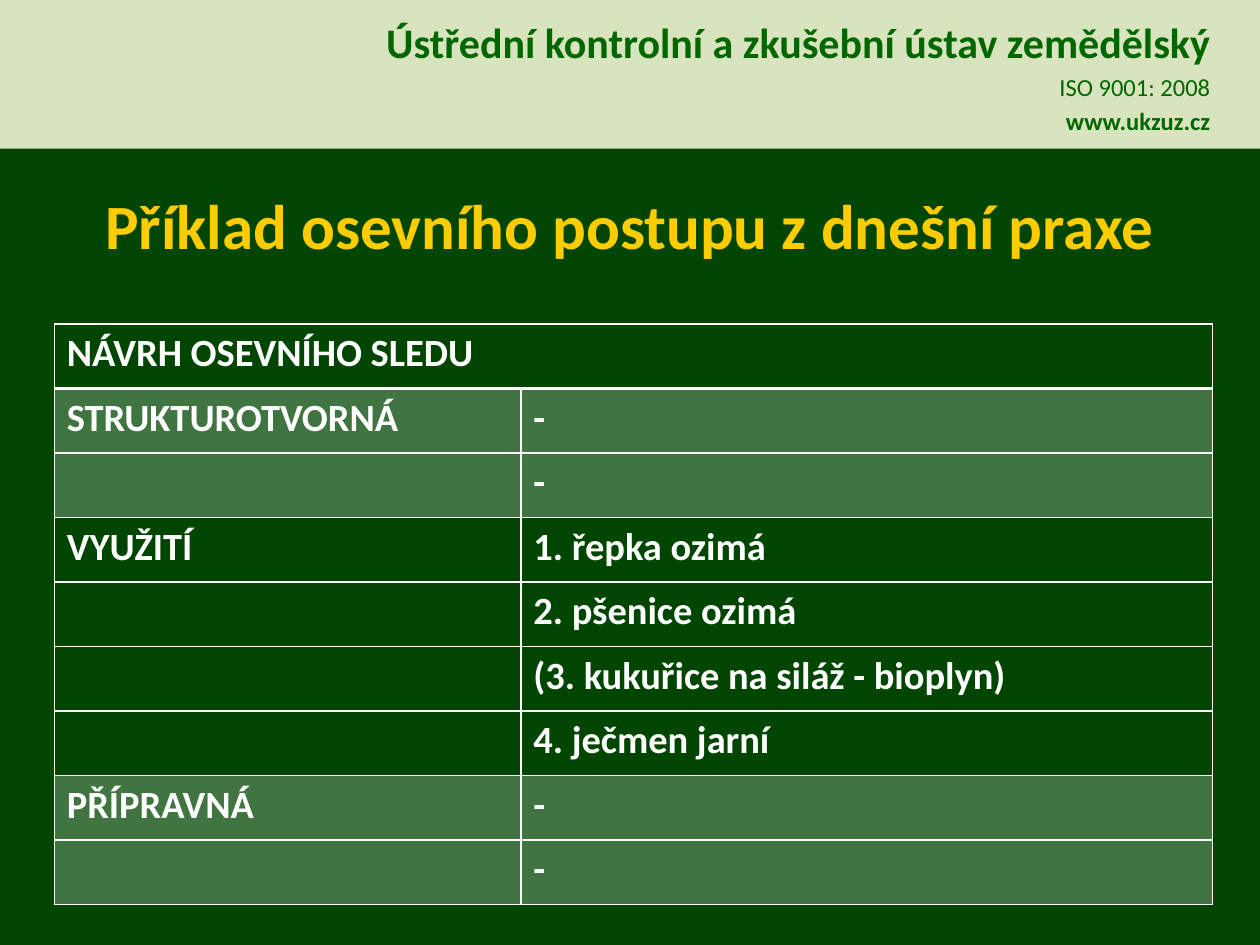
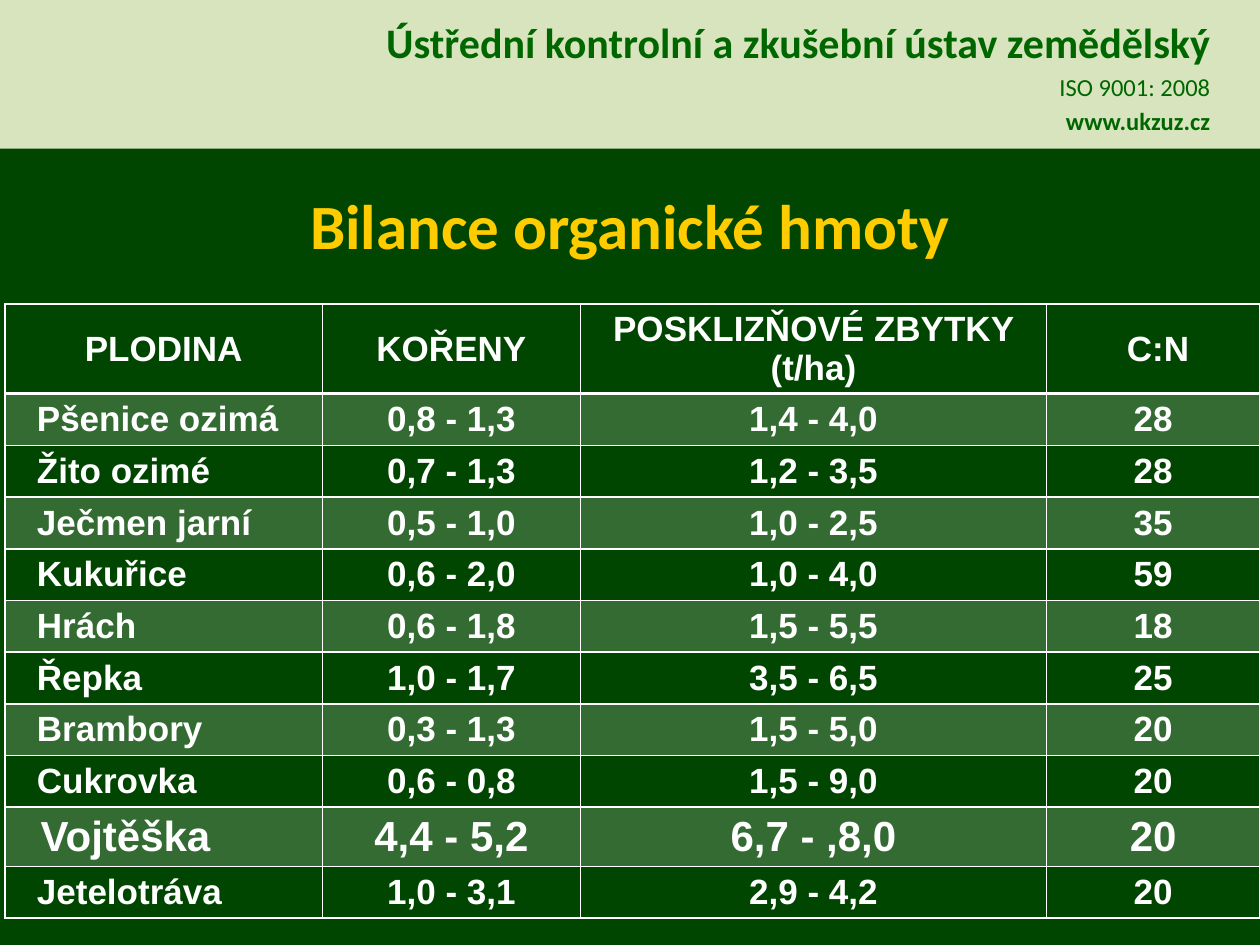
import lxml.etree
import pptx
import pptx.dml.color
import pptx.enum.shapes
import pptx.enum.text
import pptx.oxml.ns
import pptx.util

Pt = pptx.util.Pt
ALIGN = pptx.enum.text.PP_ALIGN
ANCHOR = pptx.enum.text.MSO_ANCHOR
qn = pptx.oxml.ns.qn

COLORS = {
    "ground": "004600",
    "band": "D7E4BD",
    "brand": "006600",
    "title": "FFCC00",
    "white": "FFFFFF",
}
WIDE, HIGH = 720, 540
INSET = 7.2

PLAN = [
    ("NÁVRH OSEVNÍHO SLEDU", ""),
    ("STRUKTUROTVORNÁ", "-"),
    ("", "-"),
    ("VYUŽITÍ", "1. řepka ozimá"),
    ("", "2. pšenice ozimá"),
    ("", "(3. kukuřice na siláž - bioplyn)"),
    ("", "4. ječmen jarní"),
    ("PŘÍPRAVNÁ", "-"),
    ("", "-"),
]
CROPS = [
    ("PLODINA", "KOŘENY", "POSKLIZŇOVÉ ZBYTKY (t/ha)", "C:N"),
    ("Pšenice ozimá", "0,8 - 1,3", "1,4 - 4,0", "28"),
    ("Žito ozimé", "0,7 - 1,3", "1,2 - 3,5", "28"),
    ("Ječmen jarní", "0,5 - 1,0", "1,0 - 2,5", "35"),
    ("Kukuřice", "0,6 - 2,0", "1,0 - 4,0", "59"),
    ("Hrách", "0,6 - 1,8", "1,5 - 5,5", "18"),
    ("Řepka", "1,0 - 1,7", "3,5 - 6,5", "25"),
    ("Brambory", "0,3 - 1,3", "1,5 - 5,0", "20"),
    ("Cukrovka", "0,6 - 0,8", "1,5 - 9,0", "20"),
    ("Vojtěška", "4,4 - 5,2", "6,7 - ,8,0", "20"),
    ("Jetelotráva", "1,0 - 3,1", "2,9 - 4,2", "20"),
]
STRESSED = 9  # the row of CROPS in larger type


def rgb(name):
    return pptx.dml.color.RGBColor.from_string(COLORS[name])


def style(para, size, color, face="Calibri", bold=True, align=None):
    para.alignment = align
    for run in para.runs:
        font = run.font
        font.size, font.name, font.bold = Pt(size), face, bold
        font.color.rgb = rgb(color)


def add_band(slide, box):
    band = slide.shapes.add_shape(
        pptx.enum.shapes.MSO_SHAPE.RECTANGLE, *map(Pt, box))
    band.shadow.inherit = False
    band.fill.solid()
    band.fill.fore_color.rgb = rgb("band")
    band.line.fill.background()
    frame = band.text_frame
    frame.word_wrap = True
    frame.vertical_anchor = ANCHOR.TOP
    frame.margin_right = Pt(28.3)
    frame.text = ("Ústřední kontrolní a zkušební ústav zemědělský\n"
                  "ISO 9001: 2008\nwww.ukzuz.cz")
    name, norm, site = frame.paragraphs
    style(name, 24, "brand", align=ALIGN.RIGHT)
    style(norm, 14, "brand", bold=False, align=ALIGN.RIGHT)
    style(site, 14, "brand", align=ALIGN.RIGHT)
    name.line_spacing = Pt(34.7)
    norm.space_before = site.space_before = Pt(2.9)


def add_title(slide, box, text):
    frame = slide.shapes.add_textbox(*map(Pt, box)).text_frame
    frame.word_wrap = True
    frame.vertical_anchor = ANCHOR.MIDDLE
    frame.text = text
    style(frame.paragraphs[0], 36, "title", align=ALIGN.CENTER)


def add_page(deck, title):
    """Add a slide with the shared ground, band and title."""
    slide = deck.slides.add_slide(deck.slide_layouts[6])
    ground = slide.background.fill
    ground.solid()
    ground.fore_color.rgb = rgb("ground")
    add_band(slide, (0, 0, WIDE, 85))
    add_title(slide, (0, 99.5, WIDE, 57), title)
    return slide


def set_edges(cell, row):
    """Draw white borders, with a thicker rule under the heading row."""
    props = cell._tc.get_or_add_tcPr()
    widths = {"L": 1, "R": 1, "T": 2 if row == 1 else 1, "B": 2 if row == 0 else 1}
    for side, width in widths.items():
        line = lxml.etree.SubElement(props, qn("a:ln" + side), w=str(Pt(width)))
        fill = lxml.etree.SubElement(line, qn("a:solidFill"))
        lxml.etree.SubElement(fill, qn("a:srgbClr"), val=COLORS["white"])


def set_tint(cell, share):
    """Fill the cell with white of the given percentage, or not at all."""
    if not share:
        cell.fill.background()
        return
    cell.fill.solid()
    cell.fill.fore_color.rgb = rgb("white")
    color = cell._tc.tcPr.find(qn("a:solidFill")).find(qn("a:srgbClr"))
    lxml.etree.SubElement(color, qn("a:alpha"), val=str(share * 1000))


def add_grid(slide, box, rows, widths, heights, tinted, share):
    """Add a bordered table with its text and row tints."""
    shape = slide.shapes.add_table(len(rows), len(widths), *map(Pt, box))
    table = shape.table
    table.horz_banding = False
    for col, width in zip(table.columns, widths):
        col.width = Pt(width)
    for r, (texts, height) in enumerate(zip(rows, heights)):
        table.rows[r].height = Pt(height)
        for c, text in enumerate(texts):
            cell = table.cell(r, c)
            cell.text = text
            set_edges(cell, r)
            set_tint(cell, share if r in tinted else 0)
    return table


def add_plan(slide, box):
    """Add the crop sequence table."""
    left, top, width, height = box
    first = 266.6
    table = add_grid(slide, box, PLAN, (first, width - first),
                     [height / len(PLAN)] * len(PLAN), (1, 2, 7, 8), 25)
    table.cell(0, 0).merge(table.cell(0, 1))
    for cell in table.iter_cells():
        style(cell.text_frame.paragraphs[0], 22, "white")


def add_crops(slide, box):
    """Add the organic matter table."""
    heights = [51.4] + [29.52] * (len(CROPS) - 1)
    heights[STRESSED] = 33.9
    table = add_grid(slide, box, CROPS, (181.4, 147.4, 266.4, 121.9),
                     heights, range(1, len(CROPS), 2), 20)
    for r, texts in enumerate(CROPS):
        size = 24 if r == STRESSED else 20
        for c in range(len(texts)):
            cell = table.cell(r, c)
            cell.vertical_anchor = ANCHOR.MIDDLE
            cell.margin_top = cell.margin_bottom = Pt(1.5)
            label = r > 0 and c == 0
            if label:
                cell.margin_left = Pt(INSET + 0.55 * size)
            style(cell.text_frame.paragraphs[0], size, "white", "Arial",
                  align=ALIGN.LEFT if label else ALIGN.CENTER)
    table.cell(0, 3).margin_left = Pt(INSET + 5.6)


def main():
    deck = pptx.Presentation()
    deck.slide_width, deck.slide_height = Pt(WIDE), Pt(HIGH)
    add_plan(add_page(deck, "Příklad osevního postupu z dnešní praxe"),
             (31, 185.1, 662, 331.9))
    add_crops(add_page(deck, "Bilance organické hmoty"),
              (2.9, 173.7, 717.1, 351))
    deck.save("out.pptx")


if __name__ == "__main__":
    main()
